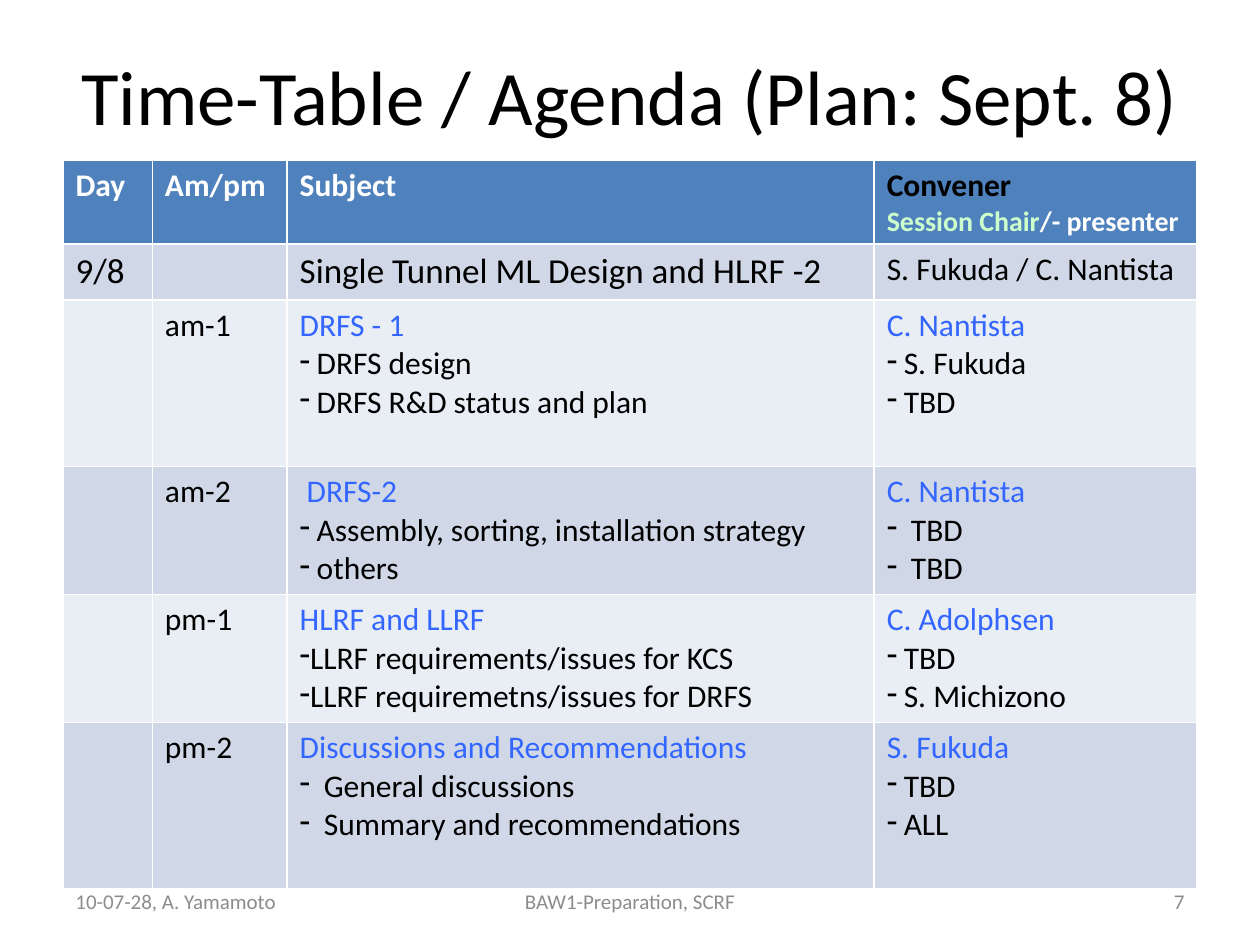
from dataclasses import dataclass

from lxml import etree
from pptx import Presentation
from pptx.dml.color import RGBColor
from pptx.enum.text import MSO_ANCHOR, PP_ALIGN
from pptx.oxml.ns import qn
from pptx.util import Pt

LEFT, CENTER, RIGHT = PP_ALIGN.LEFT, PP_ALIGN.CENTER, PP_ALIGN.RIGHT
MIDDLE = MSO_ANCHOR.MIDDLE


@dataclass(frozen=True)
class Theme:
    font: str = "Calibri"
    black: str = "000000"
    white: str = "FFFFFF"
    header: str = "4F81BD"
    bands: tuple = ("D0D8E8", "E9EDF4")
    topic: str = "3366FF"
    chair: str = "CCFFCC"
    muted: str = "8C8C8C"
    title_size: int = 44
    day_size: int = 20
    body_size: int = 18
    small_size: int = 16
    footer_size: int = 12


THEME = Theme()

COLUMNS = (51.1, 77, 335.5, 184.4)
HEADER_HEIGHT, DAY_HEIGHT = 48, 32
SHORT, TALL = 73.2, 95
TIGHT, NORMAL, WIDE = 5.6, 9.7, 13.8

SESSIONS = [
    ("am-1", TALL, 0, NORMAL, NORMAL,
     ["DRFS - 1", "DRFS design", "DRFS R&D status and plan"],
     ["C. Nantista", "S. Fukuda", "TBD"]),
    ("am-2", SHORT, 4, NORMAL, WIDE,
     ["DRFS-2", "Assembly, sorting, installation strategy", "others"],
     ["C. Nantista", "TBD", "TBD"]),
    ("pm-1", SHORT, 0, TIGHT, NORMAL,
     ["HLRF and LLRF", "LLRF requirements/issues for KCS",
      "LLRF requiremetns/issues for DRFS"],
     ["C. Adolphsen", "TBD", "S. Michizono"]),
    ("pm-2", TALL, 0, WIDE, NORMAL,
     ["Discussions and Recommendations", "General discussions",
      "Summary and recommendations"],
     ["S. Fukuda", "TBD", "ALL"]),
]


def write(p, text, size=THEME.body_size, color=THEME.black, bold=False):
    r = p.add_run()
    r.text = text
    r.font.name = THEME.font
    r.font.size = Pt(size)
    r.font.bold = bold
    r.font.color.rgb = RGBColor.from_string(color)


def indent(p, left, hanging=0):
    pPr = p._p.get_or_add_pPr()
    pPr.set("marL", str(Pt(left)))
    pPr.set("indent", str(Pt(-hanging)))
    return pPr


def add_dash(p, gap):
    pPr = indent(p, gap, gap)
    etree.SubElement(pPr, qn("a:buFontTx"))
    etree.SubElement(pPr, qn("a:buChar")).set("char", "-")


def add_label(s, text, left, top, width, height, align=LEFT, **fmt):
    sp = s.shapes.add_textbox(Pt(left), Pt(top), Pt(width), Pt(height))
    tf = sp.text_frame
    tf.word_wrap = True
    tf.vertical_anchor = MIDDLE
    p = tf.paragraphs[0]
    p.alignment = align
    write(p, text, **fmt)


def fill_row(table, row, height, color):
    table.rows[row].height = Pt(height)
    for cell in table.rows[row].cells:
        cell.fill.solid()
        cell.fill.fore_color.rgb = RGBColor.from_string(color)


def write_cell(table, row, col, text, **fmt):
    p = table.cell(row, col).text_frame.paragraphs[0]
    write(p, text, **fmt)
    return p


def write_list(table, row, col, lines, gap, offset=0):
    heading, *items = lines
    p = write_cell(table, row, col, heading, color=THEME.topic)
    if offset:
        indent(p, offset)
    for item in items:
        p = table.cell(row, col).text_frame.add_paragraph()
        add_dash(p, gap)
        write(p, item)


def add_header(table):
    fill_row(table, 0, HEADER_HEIGHT, THEME.header)
    for col, text in enumerate(("Day", "Am/pm", "Subject")):
        write_cell(table, 0, col, text, color=THEME.white, bold=True)
    write_cell(table, 0, 3, "Convener", bold=True)
    p = table.cell(0, 3).text_frame.add_paragraph()
    for text, color in (("Session Chair", THEME.chair), ("/- presenter", THEME.white)):
        write(p, text, size=THEME.small_size, color=color, bold=True)


def add_agenda(s):
    total = HEADER_HEIGHT + DAY_HEIGHT + sum(session[1] for session in SESSIONS)
    table = s.shapes.add_table(len(SESSIONS) + 2, len(COLUMNS), Pt(36), Pt(91.5),
                               Pt(sum(COLUMNS)), Pt(total)).table
    for column, width in zip(table.columns, COLUMNS):
        column.width = Pt(width)
    add_header(table)
    fill_row(table, 1, DAY_HEIGHT, THEME.bands[0])
    write_cell(table, 1, 0, "9/8", size=THEME.day_size)
    write_cell(table, 1, 2, "Single Tunnel ML Design and HLRF -2", size=THEME.day_size)
    write_cell(table, 1, 3, "S. Fukuda / C. Nantista")
    for row, session in enumerate(SESSIONS, start=2):
        slot, height, offset, subject_gap, people_gap, subjects, people = session
        fill_row(table, row, height, THEME.bands[(row - 1) % 2])
        write_cell(table, row, 1, slot)
        write_list(table, row, 2, subjects, subject_gap, offset)
        write_list(table, row, 3, people, people_gap)


def add_footer(s):
    for text, left, width, align in (
        ("10-07-28, A. Yamamoto", 36, 168, LEFT),
        ("BAW1-Preparation, SCRF", 246, 228, CENTER),
        ("7", 516, 168, RIGHT),
    ):
        add_label(s, text, left, 500.5, width, 28.75, align,
                  size=THEME.footer_size, color=THEME.muted)


def main():
    prs = Presentation()
    prs.slide_width, prs.slide_height = Pt(720), Pt(540)
    s = prs.slides.add_slide(prs.slide_layouts[6])
    add_label(s, "Time-Table / Agenda (Plan: Sept. 8)", 36, 21.6, 648, 65.5, CENTER,
              size=THEME.title_size)
    add_agenda(s)
    add_footer(s)
    prs.save("out.pptx")


if __name__ == "__main__":
    main()
